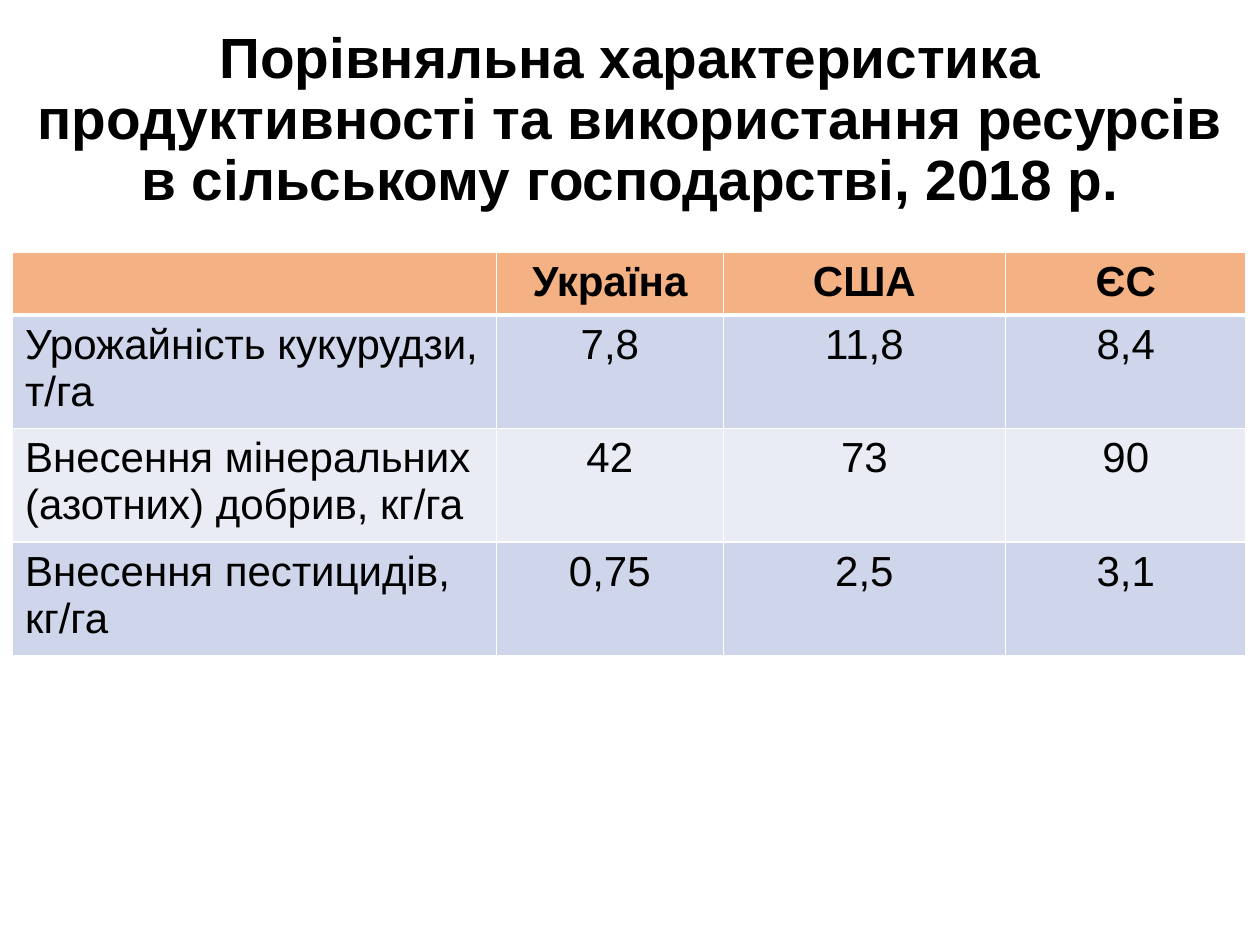
from lxml.etree import SubElement
from pptx import Presentation
from pptx.dml.color import RGBColor
from pptx.enum.text import MSO_ANCHOR, PP_ALIGN
from pptx.oxml.ns import qn
from pptx.util import Pt

BLACK = RGBColor(0x00, 0x00, 0x00)
WHITE = RGBColor(0xFF, 0xFF, 0xFF)
ORANGE = RGBColor(0xF4, 0xB1, 0x83)
BLUE = RGBColor(0xCF, 0xD5, 0xEA)
PALE_BLUE = RGBColor(0xE9, 0xEB, 0xF5)

TITLE = ("Порівняльна характеристика продуктивності та використання "
         "ресурсів в сільському господарстві, 2018 р.")
ROWS = [
    ["", "Україна", "США", "ЄС"],
    ["Урожайність кукурудзи, т/га", "7,8", "11,8", "8,4"],
    ["Внесення мінеральних (азотних) добрив, кг/га", "42", "73", "90"],
    ["Внесення пестицидів, кг/га", "0,75", "2,5", "3,1"],
]
COL_WIDTHS = [276.5, 129.6, 161.3, 137.5]
ROW_HEIGHTS = [34, 60.5, 60.5, 60.5]


def style_paragraph(p, size, bold, align):
    p.alignment = align
    p.font.name = "Arial"
    p.font.size = Pt(size)
    p.font.bold = bold
    p.font.color.rgb = BLACK


def add_title(s):
    tf = s.shapes.add_textbox(Pt(13.7), Pt(12.2), Pt(692.6), Pt(113.8)).text_frame
    tf.word_wrap = True
    tf.vertical_anchor = MSO_ANCHOR.MIDDLE
    p = tf.paragraphs[0]
    p.text = TITLE
    p.line_spacing = 0.9
    style_paragraph(p, 32.4, True, PP_ALIGN.CENTER)


def set_borders(cell, bottom):
    """Draw white cell borders; must run before the fill is set."""
    tc_pr = cell._tc.get_or_add_tcPr()
    for side, width in (("L", 1), ("R", 1), ("T", 1), ("B", bottom)):
        ln = SubElement(tc_pr, qn(f"a:ln{side}"), w=str(Pt(width)))
        fill = SubElement(ln, qn("a:solidFill"))
        SubElement(fill, qn("a:srgbClr"), val=str(WHITE))


def fill_cell(cell, text, row, col):
    header = row == 0
    set_borders(cell, 3 if header else 1)
    cell.fill.solid()
    cell.fill.fore_color.rgb = ORANGE if header else (PALE_BLUE, BLUE)[row % 2]
    p = cell.text_frame.paragraphs[0]
    p.text = text
    style_paragraph(p, 24, header, PP_ALIGN.CENTER if col else PP_ALIGN.LEFT)


def add_comparison_table(s):
    table = s.shapes.add_table(
        len(ROWS), len(COL_WIDTHS), Pt(7.2), Pt(144),
        Pt(sum(COL_WIDTHS)), Pt(sum(ROW_HEIGHTS))).table
    for column, width in zip(table.columns, COL_WIDTHS):
        column.width = Pt(width)
    for i, (row, height) in enumerate(zip(ROWS, ROW_HEIGHTS)):
        table.rows[i].height = Pt(height)
        for j, text in enumerate(row):
            fill_cell(table.cell(i, j), text, i, j)


def main():
    prs = Presentation()
    prs.slide_width, prs.slide_height = Pt(720), Pt(540)
    s = prs.slides.add_slide(prs.slide_layouts[6])
    add_title(s)
    add_comparison_table(s)
    prs.save("out.pptx")


if __name__ == "__main__":
    main()
